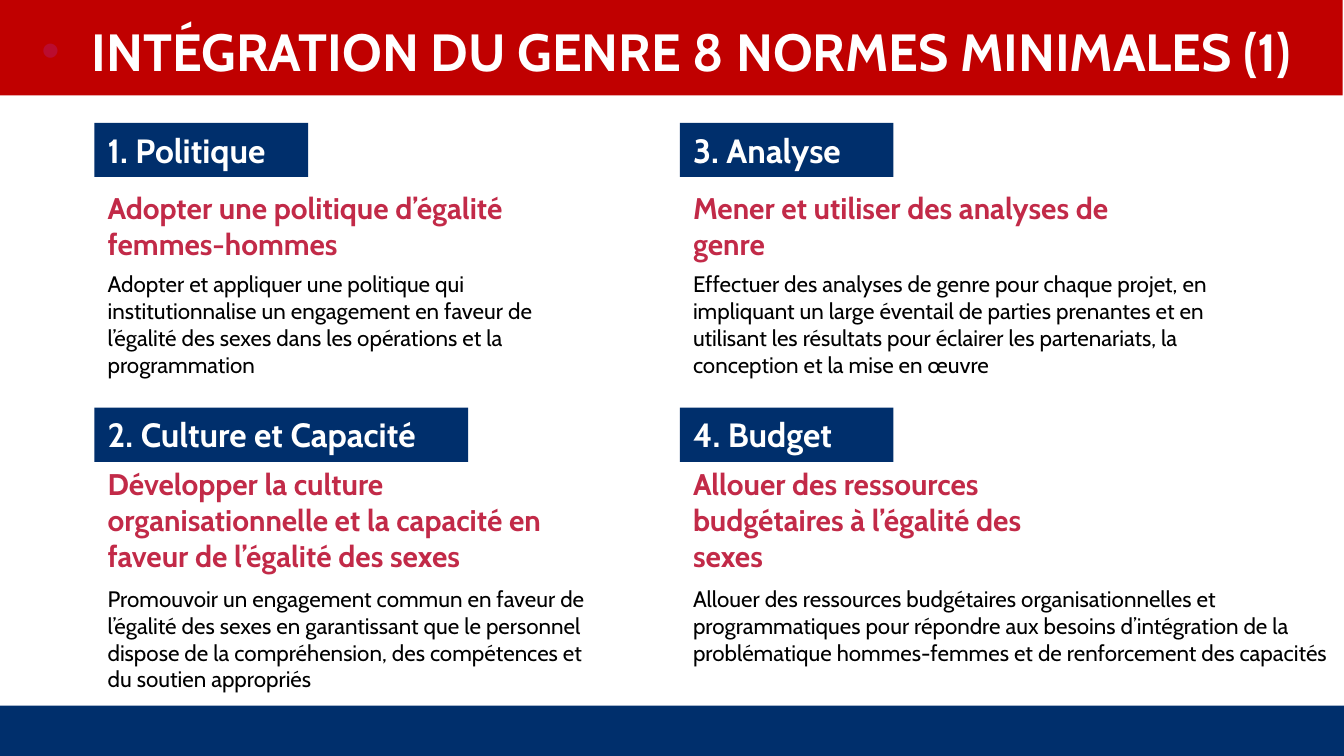
from pptx import Presentation
from pptx import util as u
from pptx.dml.color import RGBColor
from pptx.enum import shapes, text
from pptx.oxml import parse_xml
from pptx.oxml.ns import nsdecls

Pt = u.Pt
NAVY, RED, ROSE, WHITE, BLACK = "002F6C", "C00000", "C22A48", "FFFFFF", "000000"


def paint(color_format, color):
    """Fill a solid FillFormat with a hex colour."""
    color_format.solid()
    color_format.fore_color.rgb = RGBColor.from_string(color)


def write(box, words, size, color, bold, anchor):
    """Put one formatted paragraph in a box and return the paragraph."""
    frame = box.text_frame
    frame.word_wrap = True
    frame.auto_size = text.MSO_AUTO_SIZE.NONE
    frame.vertical_anchor = anchor
    para = frame.paragraphs[0]
    para.alignment = text.PP_ALIGN.LEFT
    span = para.add_run()
    span.text = words
    span.font.name = "Cabin"
    span.font.size = Pt(size)
    span.font.bold = bold
    paint(span.font.fill, color)
    return para


TOP, MIDDLE, BOTTOM = (text.MSO_ANCHOR.TOP, text.MSO_ANCHOR.MIDDLE,
                       text.MSO_ANCHOR.BOTTOM)

deck = Presentation()
deck.slide_width, deck.slide_height = Pt(720), Pt(405)
page = deck.slides.add_slide(deck.slide_layouts[5])

footer = page.shapes.add_shape(shapes.MSO_SHAPE.RECTANGLE,
                               Pt(0), Pt(378), Pt(720), Pt(27))
footer.shadow.inherit = False
paint(footer.fill, NAVY)
footer.line.fill.background()

# Title bar with a dark red bullet
title = page.shapes.title
title.left, title.top, title.width, title.height = Pt(0), Pt(0), Pt(719.3), Pt(51.1)
paint(title.fill, RED)
frame = title.text_frame
frame.margin_left = frame.margin_top = frame.margin_bottom = Pt(7.2)
frame.margin_right = Pt(13)
para = write(title, "INTÉGRATION DU GENRE 8 NORMES MINIMALES (1)", 28, WHITE, True, BOTTOM)
para.alignment = text.PP_ALIGN.CENTER
properties = para._p.get_or_add_pPr()
properties.set("marL", str(Pt(27)))
properties.set("indent", str(-Pt(27)))
for bullet in ('<a:buClr {}><a:srgbClr val="BA0C2F"/></a:buClr>',
               '<a:buFont {} typeface="Arial"/>',
               '<a:buChar {} char="•"/>'):
    properties.append(parse_xml(bullet.format(nsdecls("a"))))

# Four standards: column, row, label, its width, heading, its width, detail, its width
standards = [
    (0, 0, "1. Politique", 114.5,
     "Adopter une politique d’égalité femmes-hommes", 284.4,
     "Adopter et appliquer une politique qui institutionnalise un engagement en faveur "
     "de l’égalité des sexes dans les opérations et la programmation", 276.5),
    (0, 1, "2. Culture et Capacité", 200.2,
     "Développer la culture organisationnelle et la capacité en faveur de l’égalité "
     "des sexes", 270,
     "Promouvoir un engagement commun en faveur de l’égalité des sexes en garantissant "
     "que le personnel dispose de la compréhension, des compétences et du soutien "
     "appropriés", 276.5),
    (1, 0, "3. Analyse", 114.5,
     "Mener et utiliser des analyses de genre", 270,
     "Effectuer des analyses de genre pour chaque projet, en impliquant un large "
     "éventail de parties prenantes et en utilisant les résultats pour éclairer les "
     "partenariats, la conception et la mise en œuvre", 305.3),
    (1, 1, "4. Budget", 114.5,
     "Allouer des ressources budgétaires à l’égalité des sexes", 194.4,
     "Allouer des ressources budgétaires organisationnelles et programmatiques pour "
     "répondre aux besoins d’intégration de la problématique hommes-femmes et de "
     "renforcement des capacités", 354.2),
]
column_lefts = (50.6, 364.2)
# Each row: label top, heading top, heading height, detail top
rows = ((65.8, 98, 46, 141.2), (218.4, 245.6, 65.4, 309.8))

for column, row, label, label_width, heading, heading_width, detail, detail_width in standards:
    left = Pt(column_lefts[column])
    label_top, heading_top, heading_height, detail_top = rows[row]

    tag = page.shapes.add_shape(shapes.MSO_SHAPE.RECTANGLE,
                                left, Pt(label_top), Pt(label_width), Pt(29))
    tag.shadow.inherit = False
    paint(tag.fill, NAVY)
    tag.line.fill.background()
    write(tag, label, 18, WHITE, True, TOP)

    box = page.shapes.add_textbox(left, Pt(heading_top), Pt(heading_width), Pt(heading_height))
    write(box, heading, 16, ROSE, True, MIDDLE)

    box = page.shapes.add_textbox(left, Pt(detail_top), Pt(detail_width), Pt(65.4))
    write(box, detail, 12, BLACK, False, TOP)

deck.save("out.pptx")
